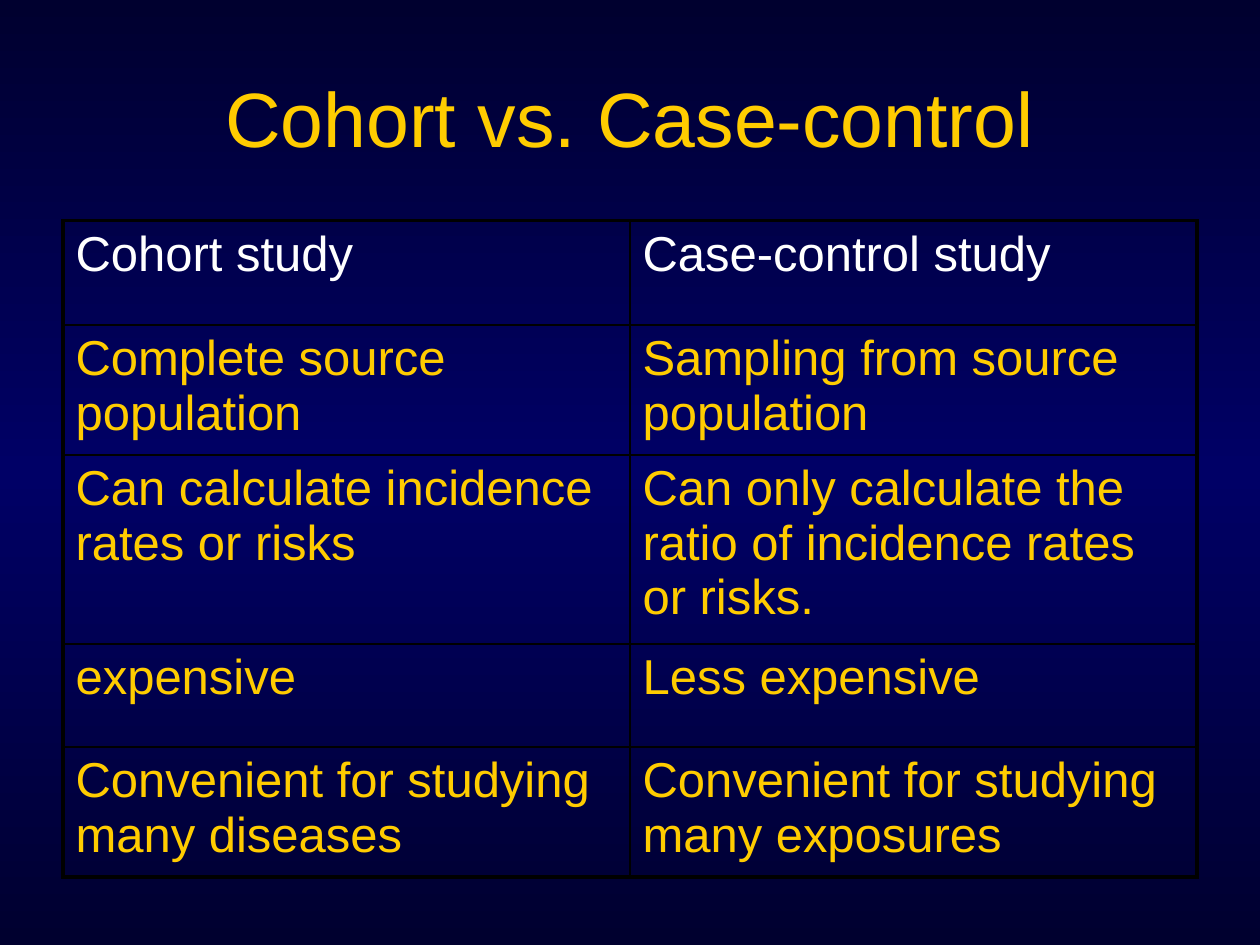
from copy import deepcopy

from lxml import etree
from pptx import Presentation
from pptx import util as u
from pptx.dml.color import RGBColor
from pptx.enum import text
from pptx.oxml.ns import qn

YELLOW, WHITE, BLACK = "FFCC00", "FFFFFF", "000000"
NAVY, BLUE = "00002F", "000066"


def style(p, size, color):
    for r in p.runs:
        r.font.name = "Arial"
        r.font.size = u.Pt(size)
        r.font.color.rgb = RGBColor.from_string(color)


def add_border(cell, side, width):
    """Draw one black cell edge; side is L, R, T or B."""
    ln = etree.SubElement(cell._tc.get_or_add_tcPr(), qn("a:ln" + side),
                          w=str(u.Pt(width)))
    fill = etree.SubElement(ln, qn("a:solidFill"))
    etree.SubElement(fill, qn("a:srgbClr"), val=BLACK)


prs = Presentation()
prs.slide_width, prs.slide_height = u.Cm(25.4), u.Cm(19.05)
s = prs.slides.add_slide(prs.slide_layouts[5])

# Background: dark at top and bottom, lighter in the middle
bg = s.background.fill
bg.gradient()
bg.gradient_angle = 90
stop_list = bg._fill._gradFill.gsLst
stop_list.append(deepcopy(stop_list[-1]))
for stop, color, position in zip(bg.gradient_stops, (NAVY, BLUE, NAVY), (0, 0.5, 1)):
    stop.color.rgb = RGBColor.from_string(color)
    stop.position = position

# Title
title = s.shapes.title
title.left, title.top = u.Cm(1.27), u.Cm(0.76)
title.width, title.height = u.Cm(22.86), u.Cm(3.18)
tf = title.text_frame
tf.text = "Cohort vs. Case-control"
tf.vertical_anchor = text.MSO_ANCHOR.MIDDLE
tf.paragraphs[0].alignment = text.PP_ALIGN.CENTER
style(tf.paragraphs[0], 44, YELLOW)

# Comparison table
rows = [
    ("Cohort study", "Case-control study"),
    ("Complete source population", "Sampling from source population"),
    ("Can calculate incidence rates or risks",
     "Can only calculate the ratio of incidence rates or risks."),
    ("expensive", "Less expensive"),
    ("Convenient for studying many diseases",
     "Convenient for studying many exposures"),
]
heights = [2.1, 2.62, 3.81, 2.08, 2.62]
table = s.shapes.add_table(len(rows), 2, u.Cm(1.27), u.Cm(4.45),
                           u.Cm(22.86), u.Cm(sum(heights))).table
table.first_row = table.horz_banding = False
for col in table.columns:
    col.width = u.Cm(11.43)

for i, (row, height) in enumerate(zip(rows, heights)):
    table.rows[i].height = u.Cm(height)
    for j, words in enumerate(row):
        cell = table.cell(i, j)
        cell.text_frame.text = words
        style(cell.text_frame.paragraphs[0], 28, YELLOW if i else WHITE)
        outer = {"L": j == 0, "R": j == 1, "T": i == 0, "B": i == len(rows) - 1}
        for side, is_outer in outer.items():
            add_border(cell, side, 2.25 if is_outer else 1)
        cell.fill.background()

prs.save("out.pptx")
